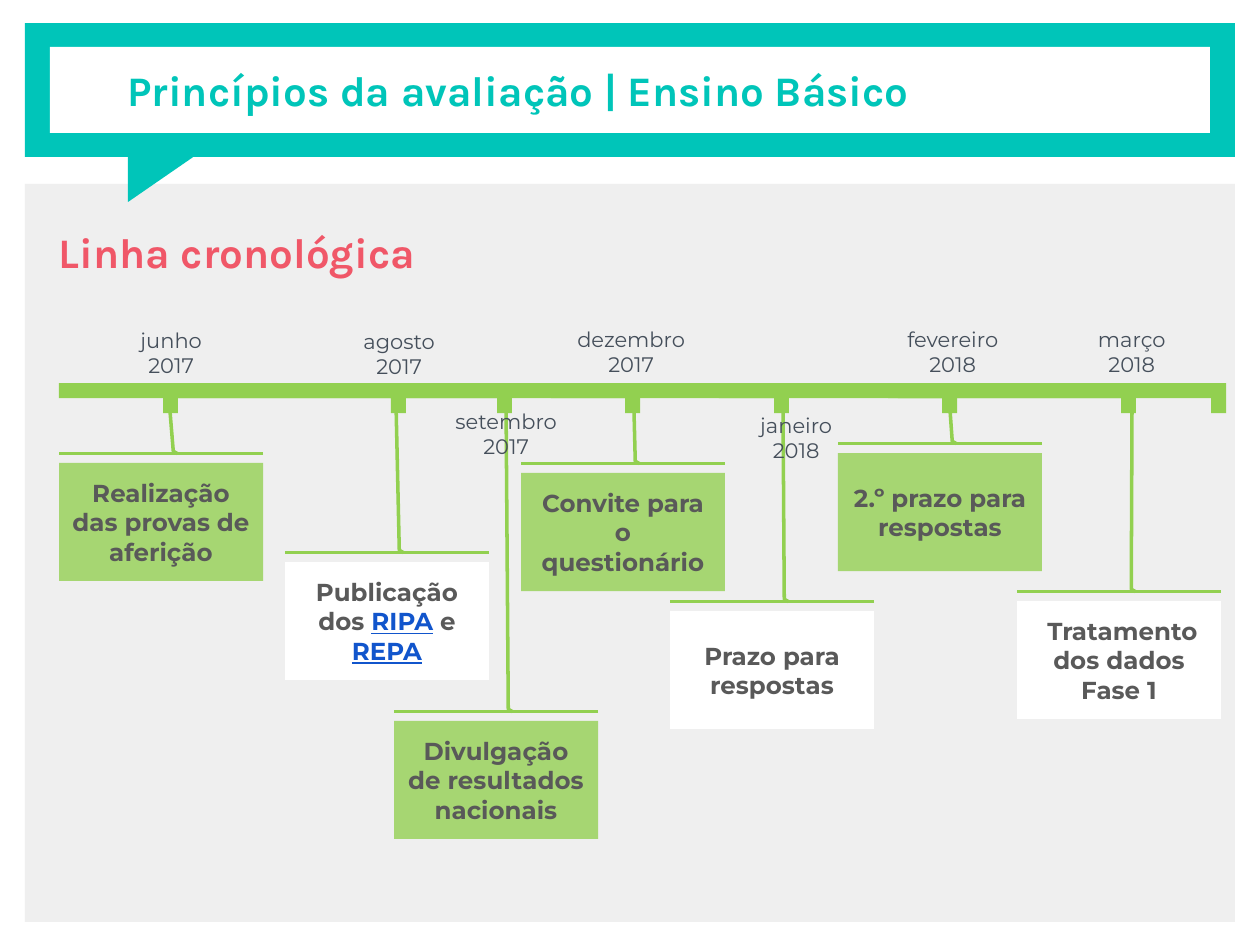
from lxml import etree
from pptx import Presentation
from pptx.dml.color import RGBColor
from pptx.enum.shapes import MSO_SHAPE
from pptx.enum.text import MSO_ANCHOR, PP_ALIGN
from pptx.oxml.ns import qn
from pptx.util import Emu, Pt

RECT = MSO_SHAPE.RECTANGLE
TRIANGLE = MSO_SHAPE.RIGHT_TRIANGLE
CORNER = MSO_SHAPE.CORNER
CALLOUT = MSO_SHAPE.LINE_CALLOUT_2_ACCENT_BAR
LEFT, CENTER = PP_ALIGN.LEFT, PP_ALIGN.CENTER
TOP, MIDDLE = MSO_ANCHOR.TOP, MSO_ANCHOR.MIDDLE

TEAL, GREEN, PINK = "00C5B9", "92D050", "F05768"
WHITE, GREY = "FFFFFF", "EFEFEF"
DATE_INK, CARD_INK, LINK_INK = "454F5B", "595959", "1155CC"
CARD_W, CARD_H = 204, 118

# Left and right end of each stretch of the timeline; a tick hangs at its right
STRETCHES = [(888, 1226), (551, 789), (402, 640), (168, 406),
             (59, 178), (719, 957), (898, 1136), (174, 512)]

# Left, top, width, month, year
DATES = [
    (48, 315, 215, "junho", "2017"),
    (270, 316, 227, "agosto", "2017"),
    (514, 314, 203, "dezembro", "2017"),
    (828, 314, 218, "fevereiro", "2018"),
    (1007, 314, 218, "março", "2018"),
    (679, 400, 203, "janeiro", "2018"),
    (389, 396, 203, "setembro", "2017"),
]

# Left, top, tip of the leader, filled with green, paragraphs (*linked* words)
CARDS = [
    (59, 463, (170, 412), True, ["Realização das provas de aferição"]),
    (285, 562, (396, 406), False, ["Publicação dos *RIPA* e *REPA*"]),
    (1017, 601, (1132, 396), False, [" Tratamento dos dados", "Fase 1"]),
    (838, 453, (949, 396), True, ["2.º prazo para respostas"]),
    (670, 611, (783, 413), False, ["Prazo para respostas"]),
    (521, 473, (634, 412), True, ["Convite para o questionário"]),
    (394, 721, (506, 403), True, ["Divulgação de resultados nacionais"]),
]


def px(length):
    return Emu(round(length * 914400 / 126))


def color(hex_code):
    return RGBColor.from_string(hex_code)


def add_block(slide, kind, x, y, w, h, fill, rotation=0):
    """Place a shape so that its box after rotation is x, y, w, h."""
    if rotation == 90:
        x, y, w, h = x + (w - h) / 2, y + (h - w) / 2, h, w
    block = slide.shapes.add_shape(kind, px(x), px(y), px(w), px(h))
    block.rotation = rotation
    block.shadow.inherit = False
    block.fill.solid()
    block.fill.fore_color.rgb = color(fill)
    block.line.fill.background()
    return block


def write(frame, paragraphs, size, font, ink, bold=False, align=LEFT,
          anchor=TOP, indent=0):
    frame.word_wrap = True
    frame.vertical_anchor = anchor
    for i, words in enumerate(paragraphs):
        paragraph = frame.paragraphs[0] if i == 0 else frame.add_paragraph()
        paragraph.alignment = align
        if indent:
            properties = paragraph._p.get_or_add_pPr()
            properties.set("marL", str(px(indent)))
            properties.set("indent", "0")
        for j, part in enumerate(words.split("*")):
            if not part:
                continue
            linked = j % 2 == 1
            run = paragraph.add_run()
            run.text = part
            run.font.size = Pt(size)
            run.font.name = font
            run.font.bold = bold
            run.font.underline = linked
            run.font.color.rgb = color(LINK_INK if linked else ink)


def add_label(slide, x, y, w, h, paragraphs, **text_format):
    frame = slide.shapes.add_textbox(px(x), px(y), px(w), px(h)).text_frame
    frame.margin_left = frame.margin_right = px(12.6)
    frame.margin_top = frame.margin_bottom = px(12.6)
    write(frame, paragraphs, **text_format)


def add_banner(slide, x, y, w, h, title):
    # Speech bubble with its tail and white inset
    add_block(slide, RECT, x, y, w, h, TEAL)
    add_block(slide, TRIANGLE, x + 103, y + 119, 87, 60, TEAL, rotation=90)
    add_block(slide, RECT, x + 25, y + 24, w - 50, h - 48, WHITE)
    add_label(slide, x + 90, y, w - 114, h, [title], size=24, font="Karla",
              ink=TEAL, bold=True, anchor=MIDDLE)


def add_card(slide, x, y, tip, green, paragraphs):
    card = add_block(slide, CALLOUT, x, y, CARD_W, CARD_H,
                     GREEN if green else WHITE, rotation=90)
    if green:
        fill = card.fill._xPr.find(qn("a:solidFill"))[0]
        etree.SubElement(fill, qn("a:alpha")).set("val", "78000")
    card.line.color.rgb = color(GREEN)
    card.line.width = Pt(2)
    # Leader: accent bar, bend, then the tip on the timeline
    tip_x, tip_y = tip
    points = [0.42, -0.08, 0.44, -0.1,
              1 - (tip_x - x) / CARD_W, (tip_y - y) / CARD_H]
    for i, value in enumerate(points):
        card.adjustments[i] = value
    # Turn the text back upright
    card.text_frame._txBody.bodyPr.set("vert", "vert270")
    write(card.text_frame, paragraphs, size=14, font="Montserrat",
          ink=CARD_INK, bold=True, align=CENTER, anchor=MIDDLE)


def add_timeline(slide, y, h):
    for left, right in STRETCHES:
        add_block(slide, CORNER, left, y, right - left, h, GREEN, rotation=180)
    for card in CARDS:
        add_card(slide, *card)
    for left, top, width, month, year in DATES:
        add_label(slide, left, top, width, 69, [month, year], size=12,
                  font="Montserrat", ink=DATE_INK, align=CENTER, indent=31.5)


def main():
    deck = Presentation()
    deck.slide_width, deck.slide_height = px(1260), px(945)
    slide = deck.slides.add_slide(deck.slide_layouts[6])

    # Background panel and header
    add_block(slide, RECT, 25, 184, 1210, 738, GREY)
    add_banner(slide, 25, 23, 1210, 134,
               "Princípios da avaliação | Ensino Básico")

    # Timeline and its heading
    add_timeline(slide, 383, 30)
    add_label(slide, 15, 214, 464, 69, ["Linha cronológica"], size=24,
              font="Karla", ink=PINK, bold=True, indent=31.5)
    deck.save("out.pptx")


if __name__ == "__main__":
    main()
